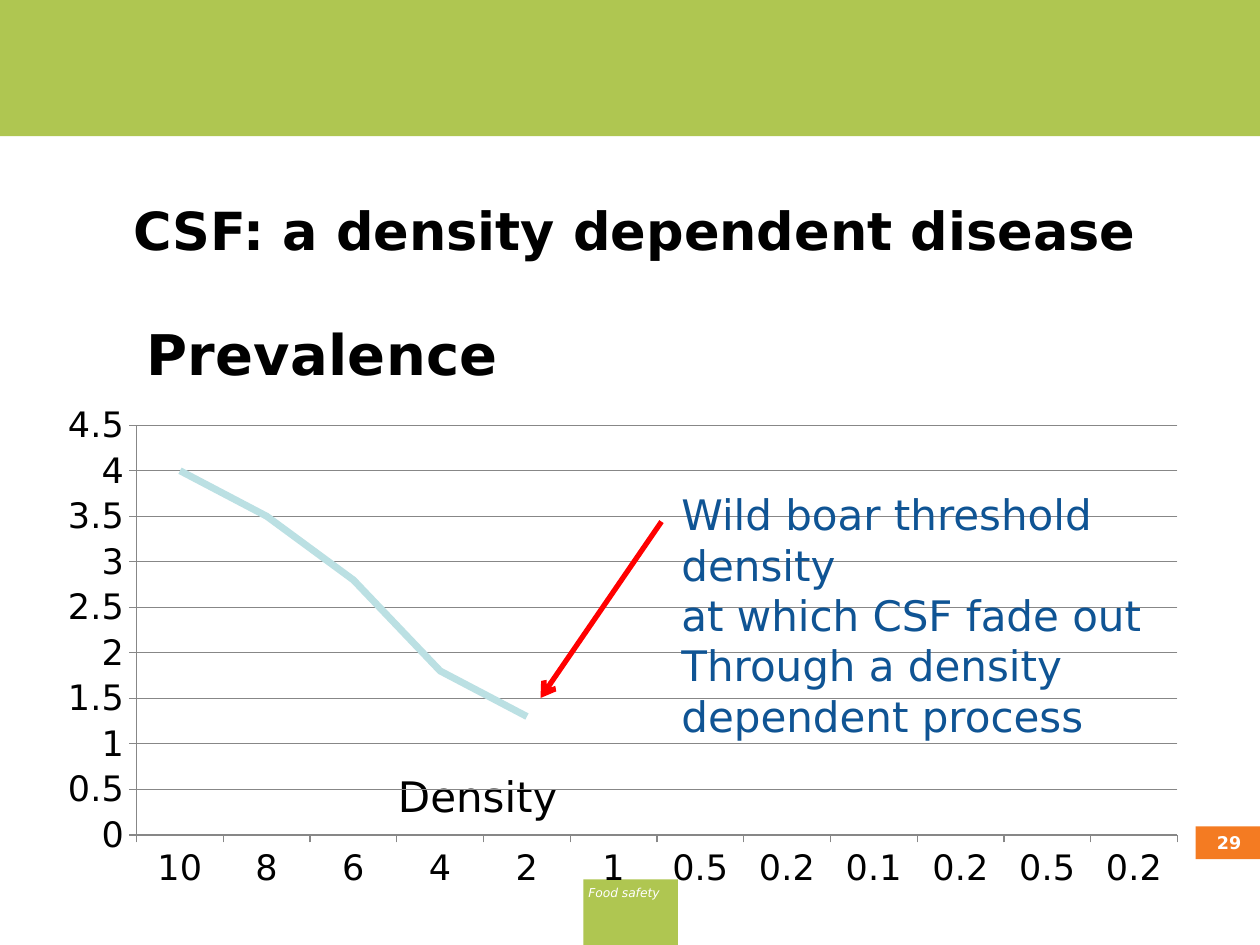
from lxml import etree
from pptx import Presentation
from pptx.chart import data
from pptx.dml.color import RGBColor
from pptx.enum import chart as ch, shapes, text
from pptx.oxml import parse_xml
from pptx.oxml.ns import nsdecls, qn
from pptx.util import Inches, Pt

FONT = "DejaVu Sans"
GREEN = RGBColor(0xAF, 0xC6, 0x51)
ORANGE = RGBColor(0xF4, 0x7B, 0x22)
WHITE = RGBColor(0xFF, 0xFF, 0xFF)
BLACK = RGBColor(0, 0, 0)
BLUE = RGBColor(0x0F, 0x54, 0x94)
RED = RGBColor(0xFF, 0, 0)
GREY = RGBColor(0x87, 0x87, 0x87)
PALE_BLUE = RGBColor(0xBB, 0xE0, 0xE3)

DENSITIES = ["10", "8", "6", "4", "2", "1", "0.5", "0.2", "0.1", "0.2", "0.5", "0.2"]
PREVALENCES = [4, 3.5, 2.8, 1.8, 1.3]


def set_font(font, size, color, bold=False, italic=False):
    font.name = FONT
    font.size = Pt(size)
    font.color.rgb = color
    font.bold = bold
    font.italic = italic


def write(frame, lines, size, color, **style):
    frame.word_wrap = True
    for number, line in enumerate(lines):
        paragraph = frame.paragraphs[0] if number == 0 else frame.add_paragraph()
        paragraph.text = line
        set_font(paragraph.font, size, color, **style)


def add_block(slide, box, color):
    block = slide.shapes.add_shape(shapes.MSO_SHAPE.RECTANGLE, *map(Inches, box))
    block.shadow.inherit = False
    block.fill.solid()
    block.fill.fore_color.rgb = color
    block.line.fill.background()
    return block


def add_label(slide, box, lines, size, color, **style):
    label = slide.shapes.add_textbox(*map(Inches, box))
    write(label.text_frame, lines, size, color, **style)
    return label


def add_arrow(slide, start, end, color, width):
    arrow = slide.shapes.add_connector(
        shapes.MSO_CONNECTOR.STRAIGHT, *map(Inches, start + end))
    arrow.line.color.rgb = color
    arrow.line.width = Pt(width)
    etree.SubElement(arrow.line._get_or_add_ln(), qn("a:tailEnd"), type="arrow")
    etree.SubElement(arrow._element.spPr, qn("a:effectLst"))


def manual_layout(target="", **places):
    inner = f'<c:layoutTarget val="{target}"/>' if target else ""
    modes = "".join(f'<c:{axis}Mode val="edge"/>' for axis in "xy")
    values = "".join(f'<c:{key} val="{value}"/>' for key, value in places.items())
    return parse_xml(f'<c:layout {nsdecls("c")}><c:manualLayout>'
                     f'{inner}{modes}{values}</c:manualLayout></c:layout>')


def place_title(title):
    element = title._element
    for layout in element.findall(qn("c:layout")):
        element.remove(layout)
    element.find(qn("c:tx")).addnext(manual_layout(x=0.08, y=0.05))


def place_plot(chart):
    plot_area = chart._chartSpace.chart.plotArea
    for layout in plot_area.findall(qn("c:layout")):
        plot_area.remove(layout)
    plot_area.insert(0, manual_layout("inner", x=0.08, y=0.24, w=0.9, h=0.653))


def style_axis(axis):
    axis.major_tick_mark = ch.XL_TICK_MARK.OUTSIDE
    axis.minor_tick_mark = ch.XL_TICK_MARK.NONE
    axis.format.line.color.rgb = GREY
    set_font(axis.tick_labels.font, 20, BLACK)


def add_prevalence_chart(slide, box):
    prevalence = data.CategoryChartData()
    prevalence.categories = DENSITIES
    gaps = [None] * (len(DENSITIES) - len(PREVALENCES))
    prevalence.add_series("Prevalence", PREVALENCES + gaps)
    chart = slide.shapes.add_chart(
        ch.XL_CHART_TYPE.LINE, *map(Inches, box), prevalence).chart
    set_font(chart.font, 10, BLACK)
    chart.has_legend = False
    chart.has_title = True
    write_title = chart.chart_title.text_frame.paragraphs[0]
    write_title.text = "Prevalence"
    set_font(write_title.font, 32, BLACK, bold=True)
    place_title(chart.chart_title)
    place_plot(chart)

    for axis in (chart.category_axis, chart.value_axis):
        style_axis(axis)
    chart.value_axis.minimum_scale = 0
    chart.value_axis.maximum_scale = 4.5
    chart.value_axis.major_unit = 0.5
    chart.value_axis.has_major_gridlines = True
    chart.value_axis.major_gridlines.format.line.color.rgb = GREY

    chart.plots[0].vary_by_categories = False
    curve = chart.plots[0].series[0]
    curve.smooth = False
    curve.marker.style = ch.XL_MARKER_STYLE.NONE
    curve.format.line.color.rgb = PALE_BLUE
    curve.format.line.width = Pt(4)


def main():
    deck = Presentation()
    deck.slide_width, deck.slide_height = Inches(10), Inches(7.5)
    slide = deck.slides.add_slide(deck.slide_layouts[6])

    add_block(slide, (0, 0, 10, 1.08), GREEN)
    footer = add_block(slide, (4.63, 6.98, 0.75, 0.53), GREEN).text_frame
    write(footer, ["Food safety"], 7, WHITE, italic=True)
    footer.margin_left = Inches(0.04)
    footer.vertical_anchor = text.MSO_ANCHOR.TOP
    footer.paragraphs[0].alignment = text.PP_ALIGN.LEFT
    page_number = add_block(slide, (9.49, 6.56, 0.53, 0.26), ORANGE).text_frame
    write(page_number, ["29"], 10, WHITE, bold=True)

    title = add_label(slide, (0.96, 1.31, 9, 1.02),
                      ["CSF: a density dependent disease"], 30, BLACK, bold=True)
    title.text_frame.vertical_anchor = text.MSO_ANCHOR.MIDDLE
    add_label(slide, (3.06, 6.07, 4.41, 0.5), ["Density"], 24, BLACK)
    add_prevalence_chart(slide, (0.35, 2.18, 9.18, 4.98))
    add_arrow(slide, (5.25, 4.14), (4.29, 5.54), RED, 3)
    add_label(slide, (5.31, 3.83, 4.49, 2.12),
              ["Wild boar threshold density", "at which CSF fade out",
               "Through a density", "dependent process"], 24, BLUE)
    deck.save("out.pptx")


if __name__ == "__main__":
    main()
